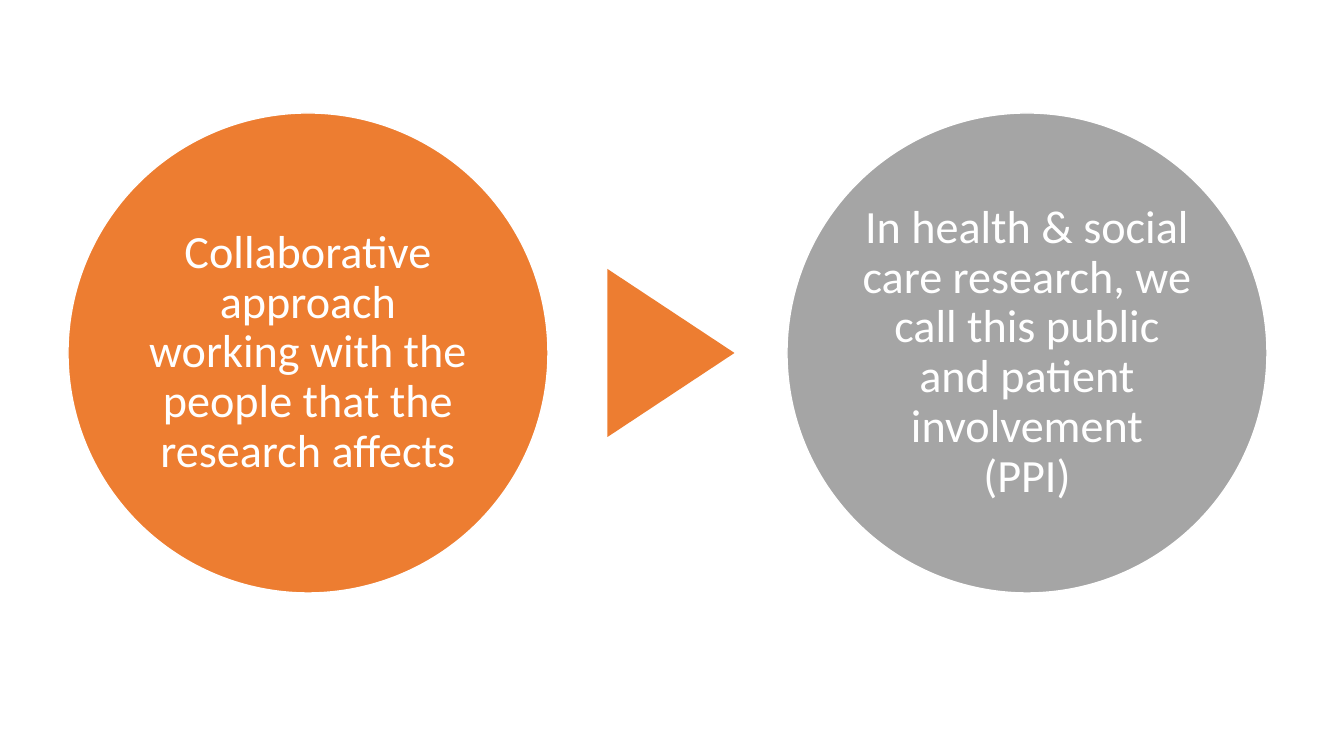
from dataclasses import dataclass

from pptx import Presentation
from pptx import util as u
from pptx.dml.color import RGBColor
from pptx.enum import shapes, text

# Content: wording and theme colour of each circle
STEPS = [
    ("Collaborative approach working with the people that the research affects", "orange"),
    ("In health & social care research, we call this public and patient involvement (PPI)", "grey"),
]


@dataclass(frozen=True)
class Theme:
    orange: str = "ED7D31"
    grey: str = "A5A5A5"
    white: str = "FFFFFF"
    font: str = "Calibri"
    text_size: int = 33
    outline: int = 1


THEME = Theme()

# Layout in px
SLIDE_W, SLIDE_H = 1344, 756
CIRCLE_LEFT, CIRCLE_TOP, CIRCLE_SIZE = 68, 113, 480
CIRCLE_PITCH = 719
TEXT_SIZE = 339
TEXT_INSET = 5
ARROW_CENTRE, ARROW_BASE, ARROW_DEPTH = 671, 168, 127


def px(value):
    return u.Emu(round(value * 914400 / 100.8))


def add_filled(page, kind, left, top, width, height, color):
    shape = page.shapes.add_shape(kind, px(left), px(top), px(width), px(height))
    shape.shadow.inherit = False
    shape.fill.solid()
    shape.fill.fore_color.rgb = RGBColor.from_string(color)
    return shape


def add_circle(page, left, color):
    circle = add_filled(page, shapes.MSO_SHAPE.OVAL, left, CIRCLE_TOP,
                        CIRCLE_SIZE, CIRCLE_SIZE, color)
    circle.line.color.rgb = RGBColor.from_string(THEME.white)
    circle.line.width = u.Pt(THEME.outline)


def add_label(page, circle_left, wording):
    margin = (CIRCLE_SIZE - TEXT_SIZE) / 2
    box = page.shapes.add_textbox(px(circle_left + margin), px(CIRCLE_TOP + margin),
                                  px(TEXT_SIZE), px(TEXT_SIZE))
    frame = box.text_frame
    frame.word_wrap = True
    frame.vertical_anchor = text.MSO_ANCHOR.MIDDLE
    frame.margin_left = frame.margin_right = px(TEXT_INSET)
    frame.margin_top = frame.margin_bottom = px(TEXT_INSET)
    frame.text = wording
    para = frame.paragraphs[0]
    para.alignment = text.PP_ALIGN.CENTER
    para.line_spacing = 0.9
    span = para.runs[0]
    span.font.name = THEME.font
    span.font.size = u.Pt(THEME.text_size)
    span.font.color.rgb = RGBColor.from_string(THEME.white)


def add_arrow(page):
    middle = CIRCLE_TOP + CIRCLE_SIZE / 2
    arrow = add_filled(page, shapes.MSO_SHAPE.ISOSCELES_TRIANGLE,
                       ARROW_CENTRE - ARROW_BASE / 2, middle - ARROW_DEPTH / 2,
                       ARROW_BASE, ARROW_DEPTH, THEME.orange)
    arrow.rotation = 90
    arrow.line.fill.background()


def main():
    deck = Presentation()
    deck.slide_width, deck.slide_height = px(SLIDE_W), px(SLIDE_H)
    page = deck.slides.add_slide(deck.slide_layouts[6])

    # Circles with their labels
    for index, (wording, color_name) in enumerate(STEPS):
        left = CIRCLE_LEFT + index * CIRCLE_PITCH
        add_circle(page, left, getattr(THEME, color_name))
        add_label(page, left, wording)

    # Arrow from the first circle to the second
    add_arrow(page)

    deck.save("out.pptx")


if __name__ == "__main__":
    main()
